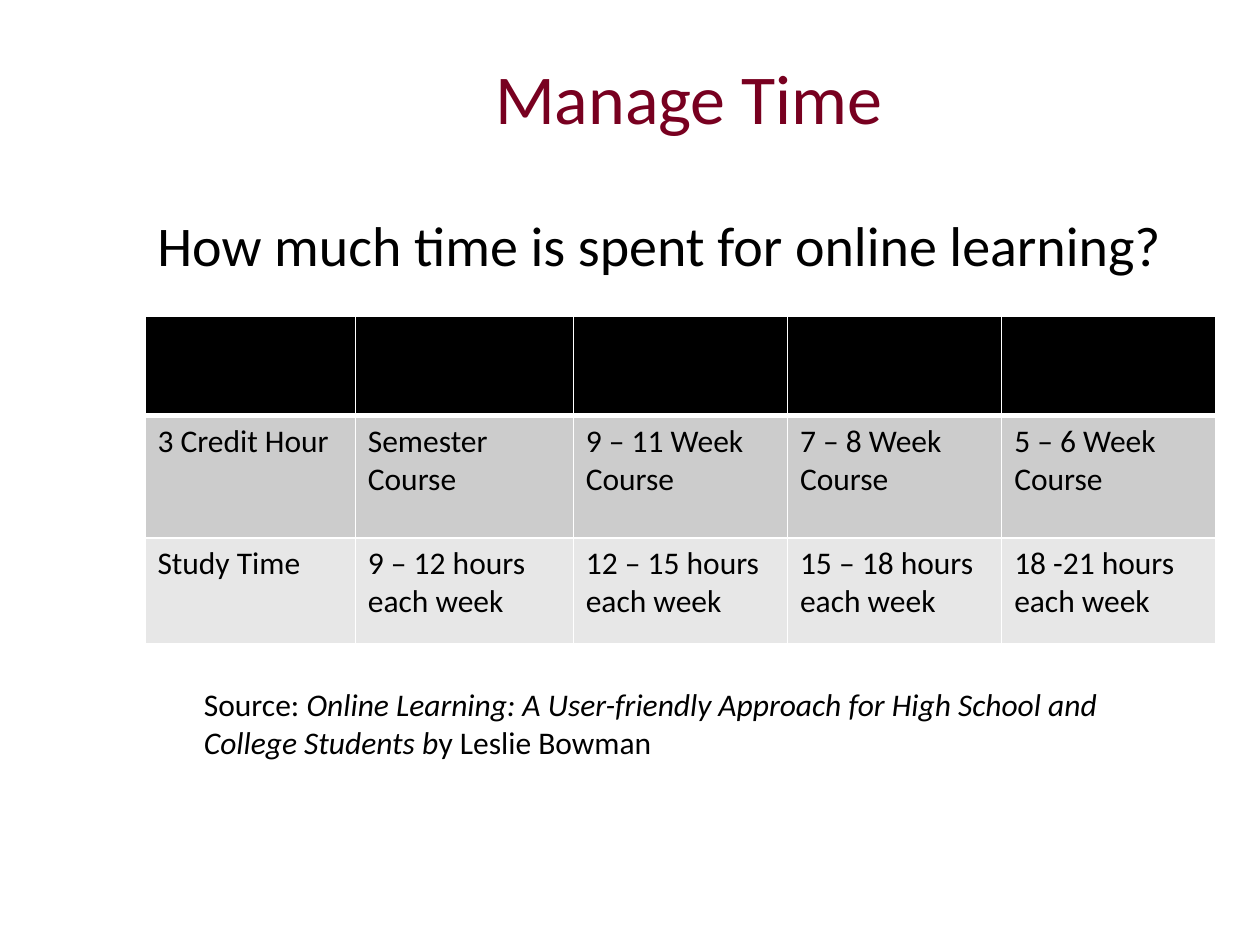
import pptx
import pptx.dml.color
import pptx.enum.text
import pptx.oxml
import pptx.oxml.ns
import pptx.util

ALIGN = pptx.enum.text.PP_ALIGN
ANCHOR = pptx.enum.text.MSO_ANCHOR
AUTOSIZE = pptx.enum.text.MSO_AUTO_SIZE
WHITE, BLACK, MAROON = "FFFFFF", "000000", "780020"

deck = pptx.Presentation()
deck.slide_width = pptx.util.Inches(10)
deck.slide_height = pptx.util.Inches(7.5)
slide = deck.slides.add_slide(deck.slide_layouts[6])

# One percent of the slide's width and height
across = deck.slide_width / 100
down = deck.slide_height / 100


def color(hex_value):
    return pptx.dml.color.RGBColor.from_string(hex_value)


def write(paragraph, runs, size, ink=BLACK):
    for words, italic in runs:
        run = paragraph.add_run()
        run.text = words
        looks = {"name": "Calibri", "size": pptx.util.Pt(size), "italic": italic}
        for attribute, value in looks.items():
            setattr(run.font, attribute, value)
        run.font.color.rgb = color(ink)


# Title, question and source; places are percent of the slide
passages = [
    {"place": (12.9, 1.87, 83.5, 16.67), "size": 40, "ink": MAROON,
     "align": ALIGN.CENTER, "anchor": ANCHOR.MIDDLE, "fit": AUTOSIZE.NONE,
     "runs": [("Manage Time", False)]},
    {"place": (11.5, 21.6, 88.5, 66.67), "size": 32, "ink": BLACK,
     "align": ALIGN.JUSTIFY, "anchor": ANCHOR.TOP, "fit": AUTOSIZE.NONE,
     "runs": [("How much time is spent for online learning?", False)]},
    {"place": (15.2, 71.87, 77.6, 9.47), "size": 18, "ink": BLACK,
     "align": ALIGN.LEFT, "anchor": ANCHOR.TOP, "fit": AUTOSIZE.SHAPE_TO_FIT_TEXT,
     "runs": [("Source: ", False),
              ("Online Learning: A User-friendly Approach for High School and "
               "College Students b", True),
              ("y Leslie Bowman", False)]},
]
for passage in passages:
    left, top, width, height = passage["place"]
    frame = slide.shapes.add_textbox(
        int(left * across), int(top * down),
        int(width * across), int(height * down)).text_frame
    layout = {"word_wrap": True, "auto_size": passage["fit"],
              "vertical_anchor": passage["anchor"]}
    for attribute, value in layout.items():
        setattr(frame, attribute, value)
    frame.paragraphs[0].alignment = passage["align"]
    write(frame.paragraphs[0], passage["runs"], passage["size"], passage["ink"])

# Study time table
study_times = [
    ["", "", "", "", ""],
    ["3 Credit Hour", "Semester Course", "9 – 11 Week Course",
     "7 – 8 Week Course", "5 – 6 Week Course"],
    ["Study Time", "9 – 12 hours each week", "12 – 15 hours each week",
     "15 – 18 hours each week", "18 -21 hours each week"],
]
column_shares = [16.7, 17.3, 17, 17, 17]
row_shares = [10.53, 12.93, 11.2]
row_fills = [BLACK, "CCCCCC", "E7E7E7"]

schedule = slide.shapes.add_table(
    len(row_shares), len(column_shares), int(11.5 * across), int(33.47 * down),
    int(sum(column_shares) * across), int(sum(row_shares) * down)).table
for column, share in zip(schedule.columns, column_shares):
    column.width = int(share * across)
for row, share in zip(schedule.rows, row_shares):
    row.height = int(share * down)

for r, entries in enumerate(study_times):
    # A thick rule parts the header from the rows below
    rules = {"L": 1, "R": 1, "T": 3 if r == 1 else 1, "B": 3 if r == 0 else 1}
    for c, entry in enumerate(entries):
        cell = schedule.cell(r, c)
        for side, weight in rules.items():
            cell._tc.get_or_add_tcPr().append(pptx.oxml.parse_xml(
                f'<a:ln{side} {pptx.oxml.ns.nsdecls("a")} w="{pptx.util.Pt(weight)}">'
                f'<a:solidFill><a:srgbClr val="{WHITE}"/></a:solidFill></a:ln{side}>'))
        cell.fill.solid()
        cell.fill.fore_color.rgb = color(row_fills[r])
        if entry:
            write(cell.text_frame.paragraphs[0], [(entry, False)], 18)

deck.save("out.pptx")
